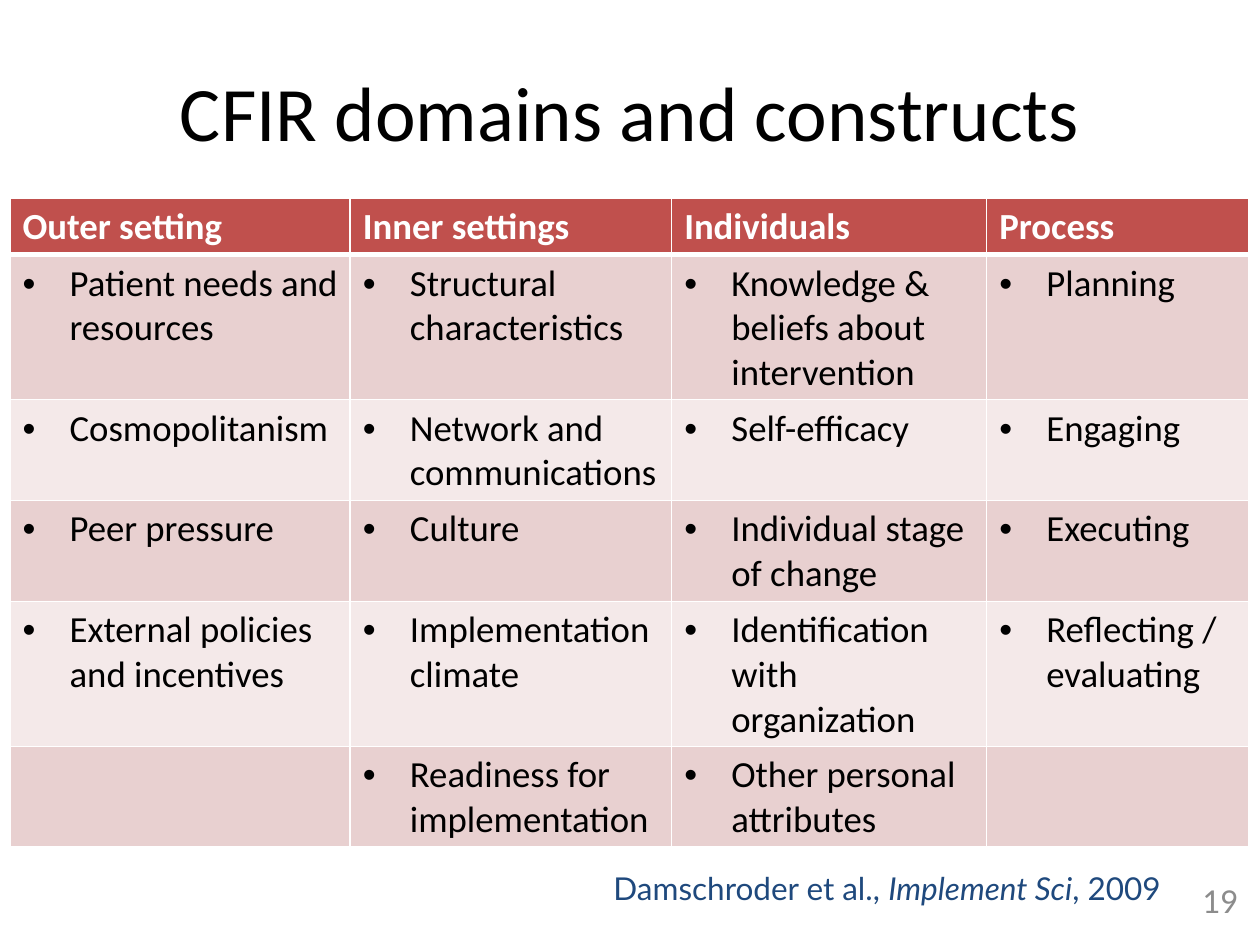
"""Build the slide of CFIR domains and constructs."""
import pptx
import pptx.dml.color
import pptx.enum.text
import pptx.oxml
import pptx.oxml.ns
import pptx.util
from pptx.dml.color import RGBColor
from pptx.util import Cm

BLACK = RGBColor(0x00, 0x00, 0x00)
WHITE = RGBColor(0xFF, 0xFF, 0xFF)
RED = RGBColor(0xC0, 0x50, 0x4D)
ROSE = RGBColor(0xE8, 0xD0, 0xD0)
PALE_ROSE = RGBColor(0xF4, 0xE9, 0xE9)
NAVY = RGBColor(0x1F, 0x49, 0x7D)
GREY = RGBColor(0x8C, 0x8C, 0x8C)

TITLE = "CFIR domains and constructs"
PAGE_NUMBER = "19"
CITATION = [("Damschroder et al., ", False), ("Implement Sci", True), (", 2009", False)]
DOMAINS = [
    ("Outer setting", 6.86, [
        "Patient needs and resources", "Cosmopolitanism", "Peer pressure",
        "External policies and incentives"]),
    ("Inner settings", 6.48, [
        "Structural characteristics", "Network and communications", "Culture",
        "Implementation climate", "Readiness for implementation"]),
    ("Individuals", 6.35, [
        "Knowledge & beliefs about intervention", "Self-efficacy",
        "Individual stage of change", "Identification with organization",
        "Other personal attributes"]),
    ("Process", 5.28, [
        "Planning", "Engaging", "Executing", "Reflecting / evaluating"]),
]
ROW_HEIGHT = 1.04
INDENT = Cm(0.95)

ALIGN = pptx.enum.text.PP_ALIGN
ANCHOR = pptx.enum.text.MSO_ANCHOR


def add_span(para, text, size, color, font="Calibri", bold=False, italic=False):
    span = para.add_run()
    span.text = text
    span.font.name = font
    span.font.size = pptx.util.Pt(size)
    span.font.color.rgb = color
    span.font.bold = bold
    span.font.italic = italic


def add_box(page, left, top, width, height, align, anchor):
    box = page.shapes.add_textbox(Cm(left), Cm(top), Cm(width), Cm(height))
    box.text_frame.word_wrap = True
    box.text_frame.vertical_anchor = anchor
    para = box.text_frame.paragraphs[0]
    para.alignment = align
    return para


def add_bullet(para):
    properties = para._p.get_or_add_pPr()
    properties.set("marL", str(INDENT))
    properties.set("indent", str(-INDENT))
    for tag, attribute, value in (("buFont", "typeface", "Arial"), ("buChar", "char", "•")):
        properties.append(pptx.oxml.parse_xml(
            f'<a:{tag} {pptx.oxml.ns.nsdecls("a")} {attribute}="{value}"/>'))


def style_cell(cell, fill, edges):
    cell.fill.solid()
    cell.fill.fore_color.rgb = fill
    properties = cell._tc.get_or_add_tcPr()
    for position, (side, points) in enumerate(edges.items()):
        properties.insert(position, pptx.oxml.parse_xml(
            f'<a:ln{side} {pptx.oxml.ns.nsdecls("a")} w="{pptx.util.Pt(points)}">'
            f'<a:solidFill><a:srgbClr val="{WHITE}"/></a:solidFill></a:ln{side}>'))


def add_domain_table(page):
    row_count = 1 + max(len(constructs) for _, _, constructs in DOMAINS)
    width = sum(column_width for _, column_width, _ in DOMAINS)
    table = page.shapes.add_table(
        row_count, len(DOMAINS), Cm(0.2), Cm(3.99), Cm(width), Cm(ROW_HEIGHT * row_count)).table
    for column, (domain, column_width, constructs) in enumerate(DOMAINS):
        table.columns[column].width = Cm(column_width)
        texts = [domain] + constructs
        for row in range(row_count):
            cell = table.cell(row, column)
            header = row == 0
            fill = RED if header else (ROSE if row % 2 else PALE_ROSE)
            edges = {"L": 1, "R": 1, "T": 3 if row == 1 else 1, "B": 3 if header else 1}
            style_cell(cell, fill, edges)
            if row < len(texts):
                para = cell.text_frame.paragraphs[0]
                if not header:
                    add_bullet(para)
                add_span(para, texts[row], 21, WHITE if header else BLACK, bold=header)


def main():
    deck = pptx.Presentation()
    deck.slide_width, deck.slide_height = Cm(25.4), Cm(19.05)
    page = deck.slides.add_slide(deck.slide_layouts[6])

    title = add_box(page, 1.27, 0.64, 22.86, 3.18, ALIGN.CENTER, ANCHOR.MIDDLE)
    add_span(title, TITLE, 44, BLACK)
    add_domain_table(page)
    number = add_box(page, 22.23, 17.65, 2.97, 0.97, ALIGN.RIGHT, ANCHOR.MIDDLE)
    add_span(number, PAGE_NUMBER, 20, GREY)
    citation = add_box(page, 7.19, 17.4, 16.46, 1.02, ALIGN.RIGHT, ANCHOR.TOP)
    for text, italic in CITATION:
        add_span(citation, text, 18, NAVY, font="Lato", italic=italic)

    deck.save("out.pptx")


if __name__ == "__main__":
    main()
